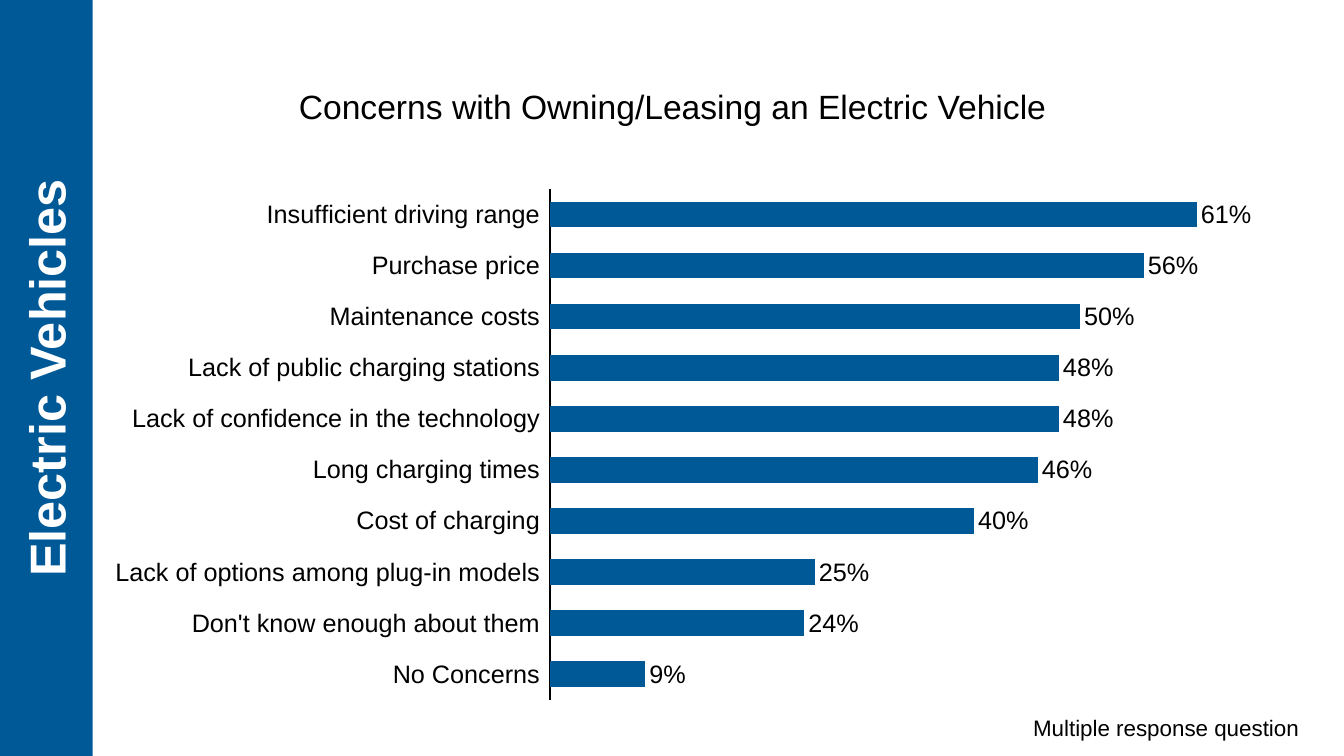
from dataclasses import dataclass

from lxml import etree
from pptx import Presentation
from pptx.chart.data import CategoryChartData
from pptx.dml.color import RGBColor
from pptx.enum.chart import XL_CHART_TYPE, XL_LABEL_POSITION, XL_TICK_LABEL_POSITION, XL_TICK_MARK
from pptx.enum.shapes import MSO_SHAPE
from pptx.enum.text import MSO_ANCHOR, MSO_AUTO_SIZE, PP_ALIGN
from pptx.oxml.ns import qn
from pptx.util import Inches, Pt

BAR_CHART = XL_CHART_TYPE.BAR_CLUSTERED
OUTSIDE_END = XL_LABEL_POSITION.OUTSIDE_END
LABELS_LOW = XL_TICK_LABEL_POSITION.LOW
NO_TICK = XL_TICK_MARK.NONE
RECTANGLE = MSO_SHAPE.RECTANGLE
MIDDLE = MSO_ANCHOR.MIDDLE
GROW = MSO_AUTO_SIZE.SHAPE_TO_FIT_TEXT
CENTER = PP_ALIGN.CENTER

SLIDE_WIDTH, SLIDE_HEIGHT = Inches(13.33), Inches(7.5)
BANNER_WIDTH = Inches(0.92)
FONT = "Arial"
BLUE, BLACK, WHITE = "005997", "000000", "FFFFFF"


@dataclass(frozen=True)
class Area:
    """Place on the slide, in percent of its width and height."""
    left: float
    top: float
    width: float
    height: float

    def lengths(self) -> tuple[int, int, int, int]:
        return (int(SLIDE_WIDTH * self.left / 100), int(SLIDE_HEIGHT * self.top / 100),
                int(SLIDE_WIDTH * self.width / 100), int(SLIDE_HEIGHT * self.height / 100))


@dataclass(frozen=True)
class Caption:
    text: str
    area: Area
    size: int


@dataclass(frozen=True)
class Concern:
    name: str
    share: float


CHART_AREA = Area(6.9, 24.53, 89.27, 68.13)
PLOT_LAYOUT = {"x": 0.381, "y": 0.007, "w": 0.619, "h": 0.993}
CAPTIONS = [
    Caption("Concerns with Owning/Leasing an Electric Vehicle", Area(18.3, 10.67, 63.47, 6.67), 24),
    Caption("Multiple response question", Area(71.42, 93.87, 30.68, 4.93), 16),
]
CONCERNS = [
    Concern("Insufficient driving range", 0.61),
    Concern("Purchase price", 0.56),
    Concern("Maintenance costs", 0.50),
    Concern("Lack of public charging stations", 0.48),
    Concern("Lack of confidence in the technology", 0.48),
    Concern("Long charging times", 0.46),
    Concern("Cost of charging", 0.40),
    Concern("Lack of options among plug-in models", 0.25),
    Concern("Don't know enough about them", 0.24),
    Concern("No Concerns", 0.09),
]


def color(value: str) -> RGBColor:
    return RGBColor.from_string(value)


def style_font(font, size: int, value: str, bold: bool = False) -> None:
    font.name, font.size, font.bold = FONT, Pt(size), bold
    font.color.rgb = color(value)


def write_line(frame, text: str, size: int, value: str, bold: bool = False) -> None:
    para = frame.paragraphs[0]
    para.alignment = CENTER
    span = para.add_run()
    span.text = text
    style_font(span.font, size, value, bold)


def add_caption(page, caption: Caption) -> None:
    box = page.shapes.add_textbox(*caption.area.lengths())
    box.text_frame.word_wrap = True
    box.text_frame.auto_size = GROW
    write_line(box.text_frame, caption.text, caption.size, BLACK)


def add_banner(page, text: str) -> None:
    # A quarter turn about the centre puts the long bar on the left edge
    offset = (SLIDE_HEIGHT - BANNER_WIDTH) // 2
    banner = page.shapes.add_shape(RECTANGLE, -offset, offset, SLIDE_HEIGHT, BANNER_WIDTH)
    banner.rotation = 270
    banner.shadow.inherit = False
    banner.fill.solid()
    banner.fill.fore_color.rgb = color(BLUE)
    banner.line.fill.background()
    frame = banner.text_frame
    frame.word_wrap = True
    frame.vertical_anchor = MIDDLE
    frame.margin_top, frame.margin_bottom = 0, Inches(0.02)
    write_line(frame, text, 36, WHITE, bold=True)


def place_plot(chart) -> None:
    plot_area = chart.element.find(".//" + qn("c:plotArea"))
    for layout in plot_area.findall(qn("c:layout")):
        plot_area.remove(layout)
    layout = etree.Element(qn("c:layout"))
    manual = etree.SubElement(layout, qn("c:manualLayout"))
    settings = {"layoutTarget": "inner", "xMode": "edge", "yMode": "edge", **PLOT_LAYOUT}
    for name, value in settings.items():
        etree.SubElement(manual, qn("c:" + name)).set("val", str(value))
    plot_area.insert(0, layout)


def add_concern_chart(page, concerns: list[Concern]) -> None:
    data = CategoryChartData(number_format="0%")
    data.categories = [concern.name for concern in concerns]
    data.add_series("Series 1", [concern.share for concern in concerns])
    chart = page.shapes.add_chart(BAR_CHART, *CHART_AREA.lengths(), data).chart
    chart.has_legend = False
    chart.has_title = False
    style_font(chart.font, 18, BLACK)
    place_plot(chart)

    # Bars and their values
    plot = chart.plots[0]
    plot.vary_by_categories = False
    plot.gap_width, plot.overlap = 100, -15
    bars = plot.series[0]
    bars.format.fill.solid()
    bars.format.fill.fore_color.rgb = color(BLUE)
    labels = bars.data_labels
    labels.show_value = True
    labels.number_format, labels.number_format_is_linked = "0%", False
    labels.position = OUTSIDE_END
    style_font(labels.font, 18, BLACK)

    # Axes
    names = chart.category_axis
    names.reverse_order = True
    names.major_tick_mark = names.minor_tick_mark = NO_TICK
    names.tick_label_position = LABELS_LOW
    names.format.line.color.rgb = color(BLACK)
    names.format.line.width = Pt(1)
    style_font(names.tick_labels.font, 18, BLACK)
    shares = chart.value_axis
    shares.minimum_scale, shares.maximum_scale, shares.major_unit = 0, 0.7, 0.1
    shares.has_major_gridlines = False
    shares.visible = False


def main() -> None:
    deck = Presentation()
    deck.slide_width, deck.slide_height = SLIDE_WIDTH, SLIDE_HEIGHT
    page = deck.slides.add_slide(deck.slide_layouts[6])
    add_concern_chart(page, CONCERNS)
    for caption in CAPTIONS:
        add_caption(page, caption)
    add_banner(page, "Electric Vehicles")
    deck.save("out.pptx")


if __name__ == "__main__":
    main()
